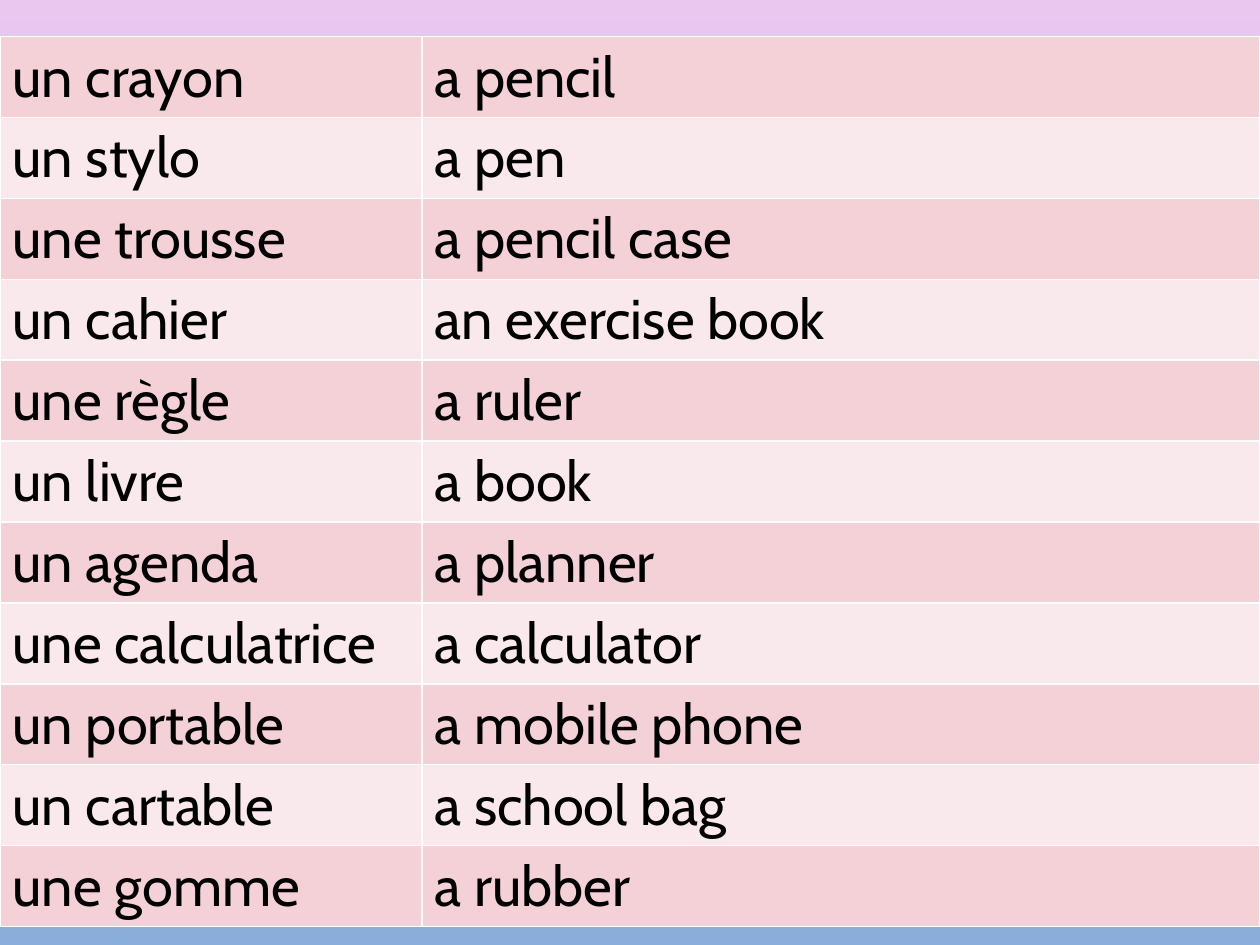
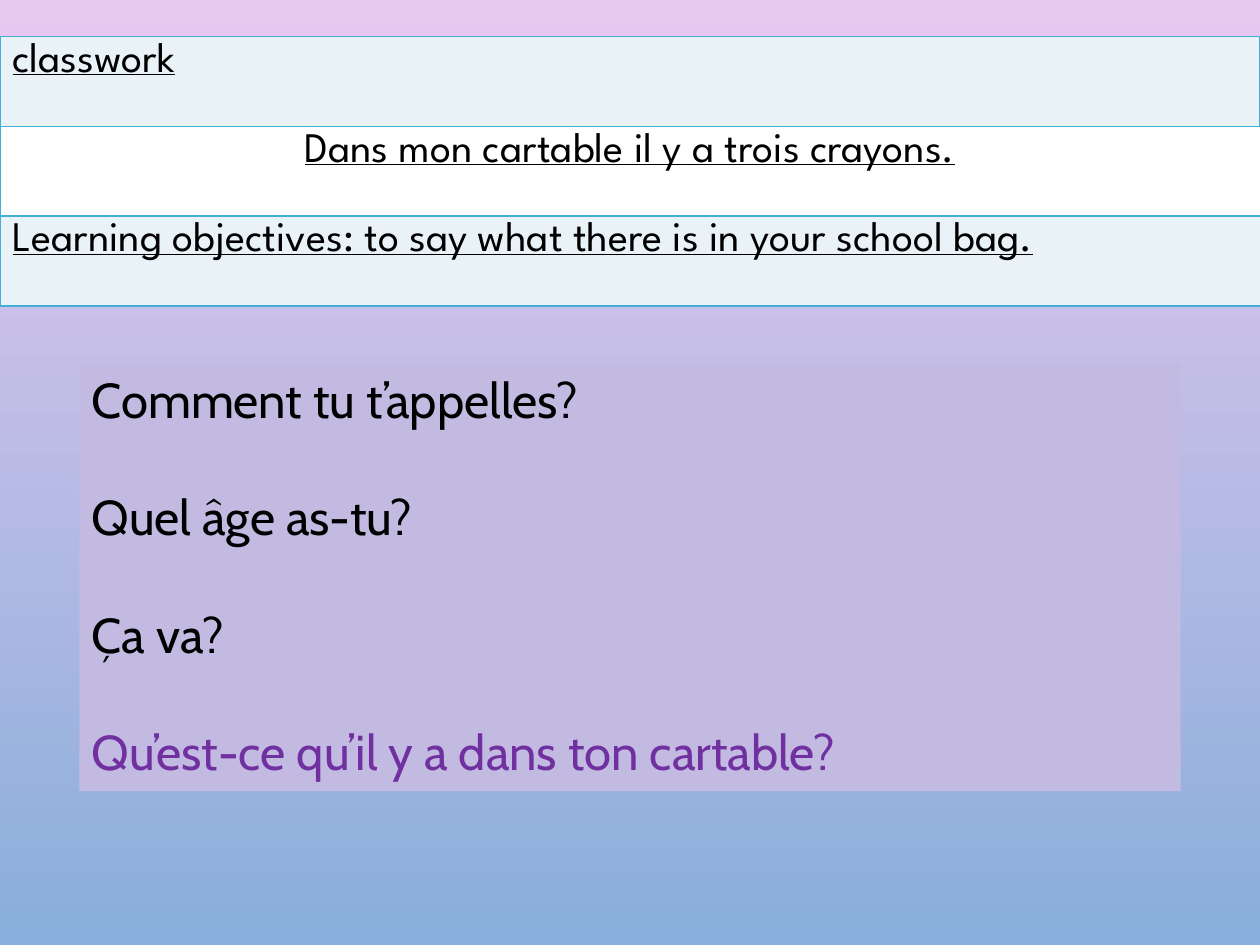
from dataclasses import dataclass

from lxml import etree
from pptx import Presentation
from pptx.dml.color import RGBColor
from pptx.enum.shapes import MSO_SHAPE
from pptx.enum.text import MSO_ANCHOR, MSO_AUTO_SIZE, PP_ALIGN
from pptx.oxml.ns import qn
from pptx.util import Inches, Pt

RECTANGLE = MSO_SHAPE.RECTANGLE
TOP = MSO_ANCHOR.TOP
FIT_SHAPE = MSO_AUTO_SIZE.SHAPE_TO_FIT_TEXT
LEFT, CENTER = PP_ALIGN.LEFT, PP_ALIGN.CENTER
SIDES = "LRTB"


@dataclass(frozen=True)
class Theme:
    sky_top: str = "E9C8EF"
    sky_bottom: str = "89AEDB"
    text: str = "000000"
    accent: str = "7030A0"
    white: str = "FFFFFF"
    rose: str = "F4D0D7"
    pale_rose: str = "FAE9EC"
    pale_blue: str = "E9F2F7"
    blue_line: str = "43AFD6"
    lilac: str = "C3BAE2"
    body_font: str = "Cabin"
    heading_font: str = "League Spartan"
    vocabulary_size: float = 32
    heading_size: float = 24
    question_size: float = 28
    question_gap: float = 33.6
    border_width: float = 1


class Deck:
    def __init__(self, theme):
        self.theme = theme
        self.deck = Presentation()
        self.deck.slide_width = Inches(10)
        self.deck.slide_height = Inches(7.5)
        self.page = None

    def add_page(self):
        self.page = self.deck.slides.add_slide(self.deck.slide_layouts[6])
        fill = self.page.background.fill
        fill.gradient()
        fill.gradient_angle = 270
        colors = (self.theme.sky_top, self.theme.sky_bottom)
        for stop, color in zip(fill.gradient_stops, colors):
            stop.color.rgb = RGBColor.from_string(color)

    def add_text(self, para, text, color, align=LEFT, **style):
        para.alignment = align
        span = para.add_run()
        span.text = text
        for name, value in style.items():
            setattr(span.font, name, value)
        span.font.color.rgb = RGBColor.from_string(color)

    def add_table(self, top, widths, height, row_count):
        frame = self.page.shapes.add_table(
            row_count, len(widths), Inches(0), Inches(top),
            Inches(sum(widths)), Inches(height))
        table = frame.table
        table.first_row = table.horz_banding = False
        for column, width in zip(table.columns, widths):
            column.width = Inches(width)
        for row in table.rows:
            row.height = Inches(height / row_count)
        return table

    def format_cell(self, cell, fill, line, sides=SIDES):
        cell.fill.solid()
        cell.fill.fore_color.rgb = RGBColor.from_string(fill)
        properties = cell._tc.get_or_add_tcPr()
        for index, side in enumerate(SIDES):
            border = etree.Element(qn(f"a:ln{side}"))
            border.set("w", str(Pt(self.theme.border_width)))
            if side in sides:
                solid = etree.SubElement(border, qn("a:solidFill"))
                etree.SubElement(solid, qn("a:srgbClr")).set("val", line)
            else:
                etree.SubElement(border, qn("a:noFill"))
            properties.insert(index, border)

    def add_vocabulary(self, words):
        theme = self.theme
        table = self.add_table(0.29, (3.35, 6.65), 6.97, len(words))
        for row, pair in enumerate(words):
            fill = theme.pale_rose if row % 2 else theme.rose
            for column, word in enumerate(pair):
                cell = table.cell(row, column)
                self.format_cell(cell, fill, theme.white)
                self.add_text(cell.text_frame.paragraphs[0], word, theme.text,
                              name=theme.body_font, size=Pt(theme.vocabulary_size))

    def add_headings(self, headings):
        theme = self.theme
        table = self.add_table(0.29, (4.13, 5.87), 2.14, len(headings))
        for row, (text, align) in enumerate(headings):
            fill = theme.white if row % 2 else theme.pale_blue
            first, last = table.cell(row, 0), table.cell(row, 1)
            self.format_cell(first, fill, theme.blue_line, "LTB")
            self.format_cell(last, fill, theme.blue_line, "RTB")
            if row:
                first.merge(last)
            self.add_text(first.text_frame.paragraphs[0], text, theme.text, align,
                          name=theme.heading_font, size=Pt(theme.heading_size),
                          underline=True)

    def add_questions(self, questions):
        theme = self.theme
        box = self.page.shapes.add_shape(
            RECTANGLE, Inches(0.63), Inches(2.88), Inches(8.74), Inches(3.4))
        box.shadow.inherit = False
        box.fill.solid()
        box.fill.fore_color.rgb = RGBColor.from_string(theme.lilac)
        box.line.fill.background()
        frame = box.text_frame
        layout = {"word_wrap": True, "auto_size": FIT_SHAPE, "vertical_anchor": TOP}
        for name, value in layout.items():
            setattr(frame, name, value)
        for index, (text, color) in enumerate(questions):
            para = frame.add_paragraph() if index else frame.paragraphs[0]
            if index:
                para.space_before = Pt(theme.question_gap)
            self.add_text(para, text, color, name=theme.body_font,
                          size=Pt(theme.question_size))


def main():
    theme = Theme()
    lesson = Deck(theme)

    lesson.add_page()
    lesson.add_vocabulary([
        ("un crayon", "a pencil"),
        ("un stylo", "a pen"),
        ("une trousse", "a pencil case"),
        ("un cahier", "an exercise book"),
        ("une règle", "a ruler"),
        ("un livre", "a book"),
        ("un agenda", "a planner"),
        ("une calculatrice", "a calculator"),
        ("un portable", "a mobile phone"),
        ("un cartable", "a school bag"),
        ("une gomme", "a rubber"),
    ])

    lesson.add_page()
    lesson.add_headings([
        ("classwork", LEFT),
        ("Dans mon cartable il y a trois crayons.", CENTER),
        ("Learning objectives: to say what there is in your school bag.", LEFT),
    ])
    lesson.add_questions([
        ("Comment tu t’appelles?", theme.text),
        ("Quel âge as-tu?", theme.text),
        ("Ça va?", theme.text),
        ("Qu’est-ce qu’il y a dans ton cartable?", theme.accent),
    ])

    lesson.deck.save("out.pptx")


if __name__ == "__main__":
    main()
